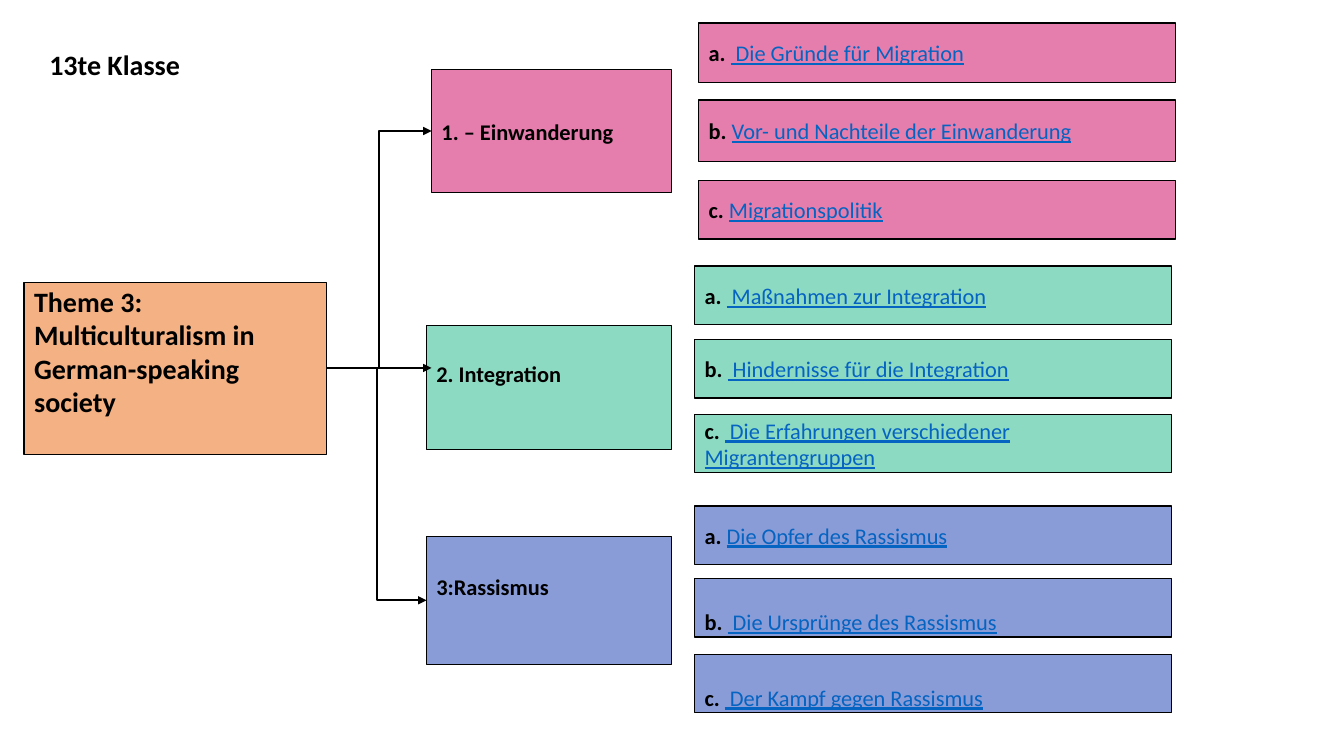
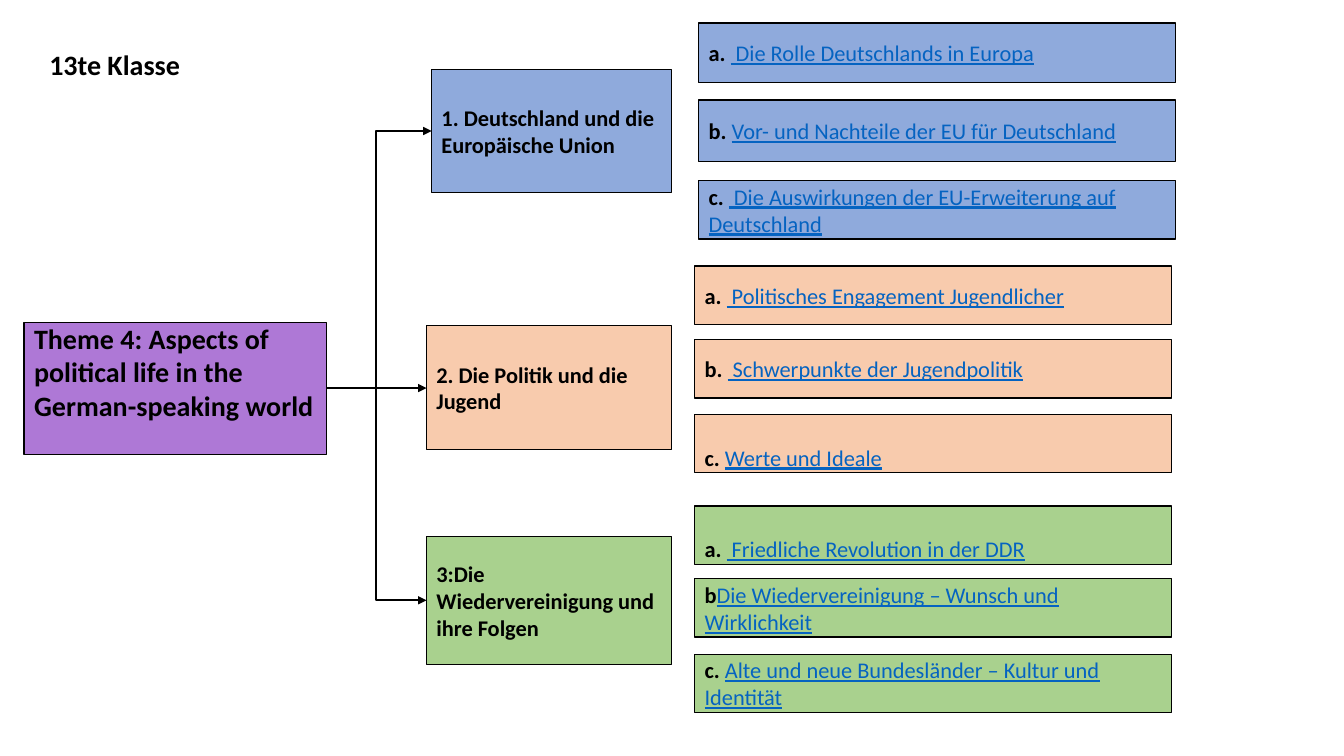
from lxml import etree
from pptx import Presentation
from pptx.dml.color import RGBColor
from pptx.enum.shapes import MSO_CONNECTOR, MSO_SHAPE
from pptx.enum.text import MSO_ANCHOR, PP_ALIGN
from pptx.oxml.ns import qn
from pptx.util import Inches, Pt

ELBOW, STRAIGHT = MSO_CONNECTOR.ELBOW, MSO_CONNECTOR.STRAIGHT
RECTANGLE = MSO_SHAPE.RECTANGLE
MIDDLE, TOP = MSO_ANCHOR.MIDDLE, MSO_ANCHOR.TOP
LEFT = PP_ALIGN.LEFT

BLACK = RGBColor(0x00, 0x00, 0x00)
LINK_BLUE = RGBColor(0x05, 0x63, 0xC1)
ORANGE = RGBColor(0xF4, 0xB1, 0x83)
PINK = RGBColor(0xE6, 0x7E, 0xAD)
MINT = RGBColor(0x8C, 0xDA, 0xC2)
PERIWINKLE = RGBColor(0x89, 0x9C, 0xD7)
PURPLE = RGBColor(0xAE, 0x78, 0xD6)
BLUE = RGBColor(0x8F, 0xAA, 0xDC)
PEACH = RGBColor(0xF8, 0xCB, 0xAD)
GREEN = RGBColor(0xA9, 0xD1, 0x8E)

FONT = "Calibri"
LARGE, SMALL = 20, 16
CLASS_LABEL = "13te Klasse"

# Content: "raised" topics sit one line higher, "lowered" subtopics one line lower
THEMES = [
    {
        "title": "Theme 3: Multiculturalism in German-speaking society",
        "fill": ORANGE, "top": 2.8, "branch_y": 3.65,
        "trunks": (3.76, 3.74), "middle_arrow_end": 4.28,
        "raised": {1, 2}, "lowered": {(2, 1), (2, 2)},
        "topics": [
            ("1. – Einwanderung", PINK, [
                ("a. ", " Die Gründe für Migration"),
                ("b. ", "Vor- und Nachteile der Einwanderung"),
                ("c. ", "Migrationspolitik")]),
            ("2. Integration", MINT, [
                ("a. ", " Maßnahmen zur Integration"),
                ("b. ", " Hindernisse für die Integration"),
                ("c. ", " Die Erfahrungen verschiedener Migrantengruppen")]),
            ("3:Rassismus", PERIWINKLE, [
                ("a. ", "Die Opfer des Rassismus"),
                ("b. ", " Die Ursprünge des Rassismus"),
                ("c. ", " Der Kampf gegen Rassismus")]),
        ],
    },
    {
        "title": "Theme 4: Aspects of political life in the German-speaking world",
        "fill": PURPLE, "top": 3.2, "branch_y": 3.85,
        "trunks": (3.73, 3.73), "middle_arrow_end": 4.23,
        "raised": set(), "lowered": {(1, 2), (2, 0)},
        "topics": [
            ("1. Deutschland und die Europäische Union", BLUE, [
                ("a. ", " Die Rolle Deutschlands in Europa"),
                ("b. ", "Vor- und Nachteile der EU für Deutschland"),
                ("c. ", " Die Auswirkungen der EU-Erweiterung auf Deutschland")]),
            ("2. Die Politik und die Jugend", PEACH, [
                ("a. ", " Politisches Engagement Jugendlicher"),
                ("b. ", " Schwerpunkte der Jugendpolitik"),
                ("c. ", "Werte und Ideale")]),
            ("3:Die Wiedervereinigung und ihre Folgen", GREEN, [
                ("a. ", " Friedliche Revolution in der DDR"),
                ("b", "Die Wiedervereinigung – Wunsch und Wirklichkeit"),
                ("c. ", "Alte und neue Bundesländer – Kultur und Identität")]),
        ],
    },
]

# Layout in inches
THEME_LEFT, THEME_WIDTH, THEME_BOTTOM = 0.24, 3.0, 4.51
THEME_RIGHT = THEME_LEFT + THEME_WIDTH
TOPIC_RIGHT = 6.66
TOPIC_ROWS = [(4.28, 0.69, 1.22), (4.23, 3.23, 1.23), (4.23, 5.32, 1.27)]
SUBTOPIC_WIDTH = 4.73
SUBTOPIC_LEFTS = [6.93, 6.89, 6.89]
SUBTOPIC_ROWS = [
    [(0.23, 0.59), (0.99, 0.61), (1.79, 0.58)],
    [(2.64, 0.58), (3.37, 0.58), (4.11, 0.58)],
    [(5.02, 0.58), (5.74, 0.58), (6.49, 0.58)],
]
MIDDLE_ARROW_LENGTH = 0.76
INSET = 0.05


def line_height(size):
    return 1.22 * size / 72


def write_text(shape, text, link="", size=SMALL, anchor=MIDDLE, wrap=True,
               lines_above=0, lines_below=0):
    """Bold text, then an underlined link-coloured part if there is one."""
    frame = shape.text_frame
    frame.word_wrap = wrap
    frame.vertical_anchor = anchor
    frame.margin_top = Inches(INSET + lines_above * line_height(size))
    frame.margin_bottom = Inches(INSET + lines_below * line_height(size))
    paragraph = frame.paragraphs[0]
    paragraph.alignment = LEFT
    for part, is_link in ((text, False), (link, True)):
        if part:
            run = paragraph.add_run()
            run.text = part
            font = run.font
            font.name, font.size = FONT, Pt(size)
            font.bold, font.underline = not is_link, is_link
            font.color.rgb = LINK_BLUE if is_link else BLACK


def add_box(slide, left, top, width, height, fill, text, **text_format):
    box = slide.shapes.add_shape(
        RECTANGLE, Inches(left), Inches(top), Inches(width), Inches(height))
    box.shadow.inherit = False
    box.fill.solid()
    box.fill.fore_color.rgb = fill
    box.line.color.rgb = BLACK
    box.line.width = Pt(1)
    write_text(box, text, **text_format)


def add_arrow(slide, start, end, trunk=None):
    """Arrow from start to end, bent at x = trunk if given."""
    arrow = slide.shapes.add_connector(
        STRAIGHT if trunk is None else ELBOW,
        *(Inches(value) for value in (*start, *end)))
    arrow.line.color.rgb = BLACK
    arrow.line.width = Pt(1.5)
    properties = arrow._element.spPr
    etree.SubElement(arrow.line._get_or_add_ln(), qn("a:tailEnd"), type="triangle")
    etree.SubElement(properties, qn("a:effectLst"))
    if trunk is not None:
        geometry = properties.find(qn("a:prstGeom"))
        adjustments = geometry.find(qn("a:avLst"))
        if adjustments is None:
            adjustments = etree.SubElement(geometry, qn("a:avLst"))
        bend = round((trunk - start[0]) / (end[0] - start[0]) * 100000)
        etree.SubElement(adjustments, qn("a:gd"), name="adj1", fmla=f"val {bend}")


def build_slide(presentation, theme):
    slide = presentation.slides.add_slide(presentation.slide_layouts[6])

    # Theme
    add_box(slide, THEME_LEFT, theme["top"], THEME_WIDTH,
            THEME_BOTTOM - theme["top"], theme["fill"], theme["title"],
            size=LARGE, lines_below=1)

    # Topics and their subtopics
    for row, (topic, fill, subtopics) in enumerate(theme["topics"]):
        left, top, height = TOPIC_ROWS[row]
        add_box(slide, left, top, TOPIC_RIGHT - left, height, fill, topic,
                lines_below=int(row in theme["raised"]))
        for index, (letter, subtopic) in enumerate(subtopics):
            top, height = SUBTOPIC_ROWS[row][index]
            add_box(slide, SUBTOPIC_LEFTS[row], top, SUBTOPIC_WIDTH, height,
                    fill, letter, link=subtopic,
                    lines_above=int((row, index) in theme["lowered"]))

    # Arrows from the theme to the topics
    branch_y = theme["branch_y"]
    outer_rows = (TOPIC_ROWS[0], TOPIC_ROWS[-1])
    for (left, top, height), trunk in zip(outer_rows, theme["trunks"]):
        add_arrow(slide, (THEME_RIGHT, branch_y), (left, top + height / 2), trunk)
    arrow_end = theme["middle_arrow_end"]
    add_arrow(slide, (arrow_end - MIDDLE_ARROW_LENGTH, branch_y), (arrow_end, branch_y))

    # Class label
    label = slide.shapes.add_textbox(
        Inches(0.39), Inches(0.42), Inches(1.51), Inches(0.44))
    write_text(label, CLASS_LABEL, size=LARGE, anchor=TOP, wrap=False)


def main():
    presentation = Presentation()
    presentation.slide_width = Inches(13.33)
    presentation.slide_height = Inches(7.5)
    for theme in THEMES:
        build_slide(presentation, theme)
    presentation.save("out.pptx")


if __name__ == "__main__":
    main()
